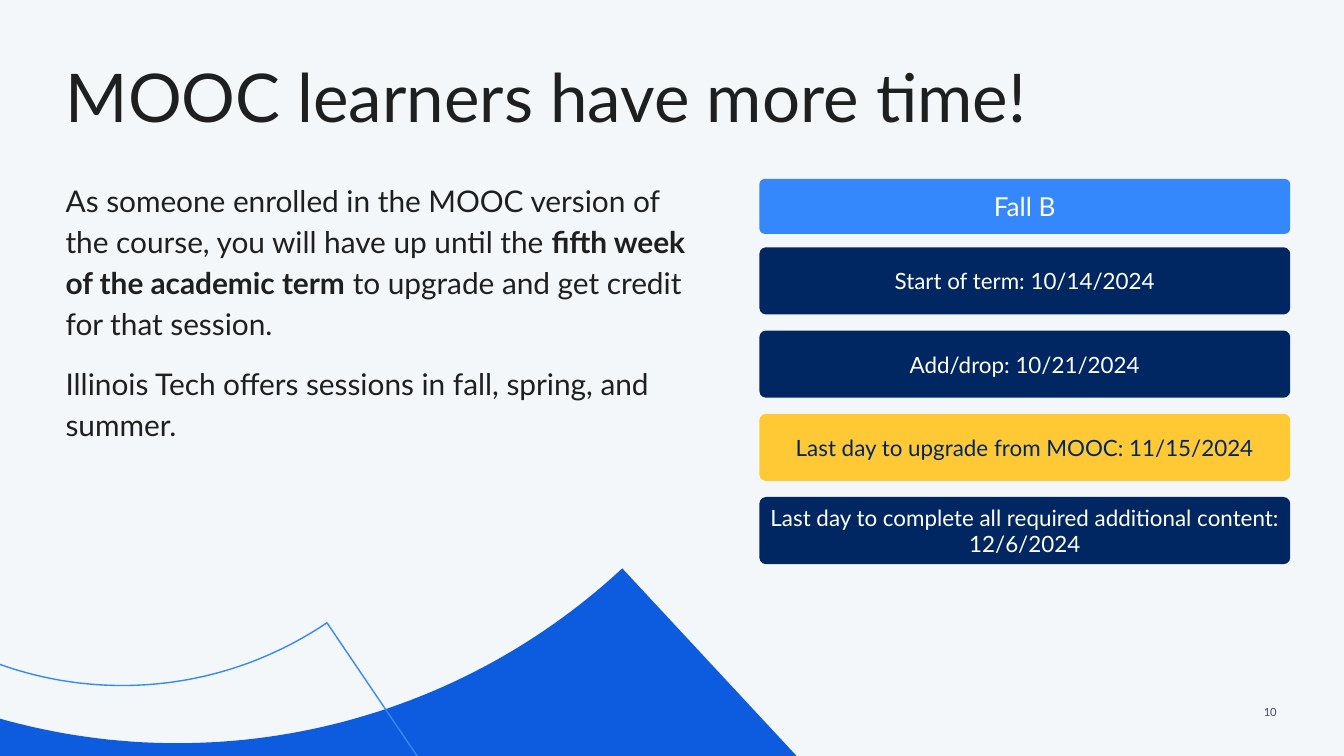
from dataclasses import dataclass
from math import cos, radians, sin

from pptx import Presentation
from pptx.dml.color import RGBColor
from pptx.enum.shapes import MSO_SHAPE as Shape
from pptx.enum.text import MSO_ANCHOR as Anchor, PP_ALIGN as Align
from pptx.util import Pt

COLORS = {
    "background": "F4F7FA", "ink": "1F1F1F", "slate": "404B61", "white": "FFFFFF",
    "royal": "0D5CDF", "sky": "3587FC", "navy": "002761", "gold": "FFC936",
}
FONT = "Lato"


@dataclass
class Band:
    """A ring segment; angles run clockwise from the right, in degrees."""
    center_x: float
    center_y: float
    inner: float
    outer: float
    start: float
    end: float
    fill: str = ""
    line: str = ""


@dataclass
class Card:
    text: str
    top: float
    height: float = 36
    size: float = 12
    fill: str = "navy"
    color: str = "white"


@dataclass
class Run:
    text: str
    bold: bool = False


def rgb(name: str) -> RGBColor:
    return RGBColor.from_string(COLORS[name])


def style_run(run, size: float, color: str, bold: bool = False) -> None:
    run.font.name = FONT
    run.font.size = Pt(size)
    run.font.bold = bold
    run.font.color.rgb = rgb(color)


def arc(band: Band, radius: float, first: float, last: float, steps: int = 60) -> list:
    angles = [radians(first + (last - first) * i / steps) for i in range(steps + 1)]
    return [(Pt(band.center_x + radius * cos(a)), Pt(band.center_y + radius * sin(a)))
            for a in angles]


def draw_band(slide, band: Band) -> None:
    outline = (arc(band, band.outer, band.end, band.start)
               + arc(band, band.inner, band.start, band.end))
    builder = slide.shapes.build_freeform(*outline[0])
    builder.add_line_segments(outline[1:], close=True)
    ring = builder.convert_to_shape()
    ring.shadow.inherit = False
    if band.fill:
        ring.fill.solid()
        ring.fill.fore_color.rgb = rgb(band.fill)
    else:
        ring.fill.background()
    if band.line:
        ring.line.color.rgb = rgb(band.line)
        ring.line.width = Pt(0.75)
    else:
        ring.line.fill.background()


def draw_text(slide, left: float, top: float, width: float, height: float,
              paragraphs: list[list[Run]], size: float, color: str, inset: float = 7.2,
              spacing: float = 1.0, gap: float = 0, align=Align.LEFT) -> None:
    frame = slide.shapes.add_textbox(Pt(left), Pt(top), Pt(width), Pt(height)).text_frame
    frame.word_wrap = True
    frame.margin_left = frame.margin_right = Pt(inset)
    frame.margin_top = frame.margin_bottom = Pt(inset)
    for i, runs in enumerate(paragraphs):
        paragraph = frame.add_paragraph() if i else frame.paragraphs[0]
        paragraph.alignment = align
        paragraph.line_spacing = spacing
        if i:
            paragraph.space_before = Pt(gap)
        for part in runs:
            run = paragraph.add_run()
            run.text = part.text
            style_run(run, size, color, part.bold)


def draw_card(slide, card: Card) -> None:
    box = slide.shapes.add_shape(Shape.ROUNDED_RECTANGLE, Pt(406.8), Pt(card.top),
                                 Pt(284.4), Pt(card.height))
    box.adjustments[0] = 0.1
    box.shadow.inherit = False
    box.fill.solid()
    box.fill.fore_color.rgb = rgb(card.fill)
    box.line.fill.background()
    frame = box.text_frame
    frame.word_wrap = True
    frame.vertical_anchor = Anchor.MIDDLE
    frame.margin_left = frame.margin_right = 0
    frame.margin_top = frame.margin_bottom = Pt(7.2)
    frame.text = card.text
    frame.paragraphs[0].alignment = Align.CENTER
    style_run(frame.paragraphs[0].runs[0], card.size, card.color)


def main() -> None:
    deck = Presentation()
    deck.slide_width, deck.slide_height = Pt(720), Pt(405)
    slide = deck.slides.add_slide(deck.slide_layouts[6])
    slide.background.fill.solid()
    slide.background.fill.fore_color.rgb = rgb("background")

    # Curved decoration at the bottom left
    draw_band(slide, Band(95, 48, 350.2, 700.5, 47.1, 107, fill="royal"))
    draw_band(slide, Band(65.5, 171.7, 195.6, 390, 55.9, 115.4, line="sky"))

    # Slide number, title and body
    draw_text(slide, 659.5, 378, 24.5, 7.2, [[Run("10")]], 6, "slate",
              inset=0, align=Align.RIGHT)
    draw_text(slide, 28.1, 27.4, 663, 54, [[Run("MOOC learners have more time!")]],
              36, "ink", spacing=0.9)
    body = [
        [Run("As someone enrolled in the MOOC version of the course, "
             "you will have up until the "),
         Run("fifth week of the academic term", bold=True),
         Run(" to upgrade and get credit for that session.")],
        [Run("Illinois Tech offers sessions in fall, spring, and summer.")],
    ]
    draw_text(slide, 28.1, 87.8, 357.8, 155.5, body, 16, "ink", spacing=1.15, gap=10)

    # Term dates: a heading card above evenly spaced date cards
    draw_card(slide, Card("Fall B", 95.8, height=29.5, size=14, fill="sky"))
    dates = [
        ("Start of term: 10/14/2024", "navy", "white"),
        ("Add/drop: 10/21/2024", "navy", "white"),
        ("Last day to upgrade from MOOC: 11/15/2024", "gold", "navy"),
        ("Last day to complete all required additional content: 12/6/2024",
         "navy", "white"),
    ]
    for i, (text, fill, color) in enumerate(dates):
        draw_card(slide, Card(text, 132.5 + 44.6 * i, fill=fill, color=color))

    deck.save("out.pptx")


if __name__ == "__main__":
    main()
